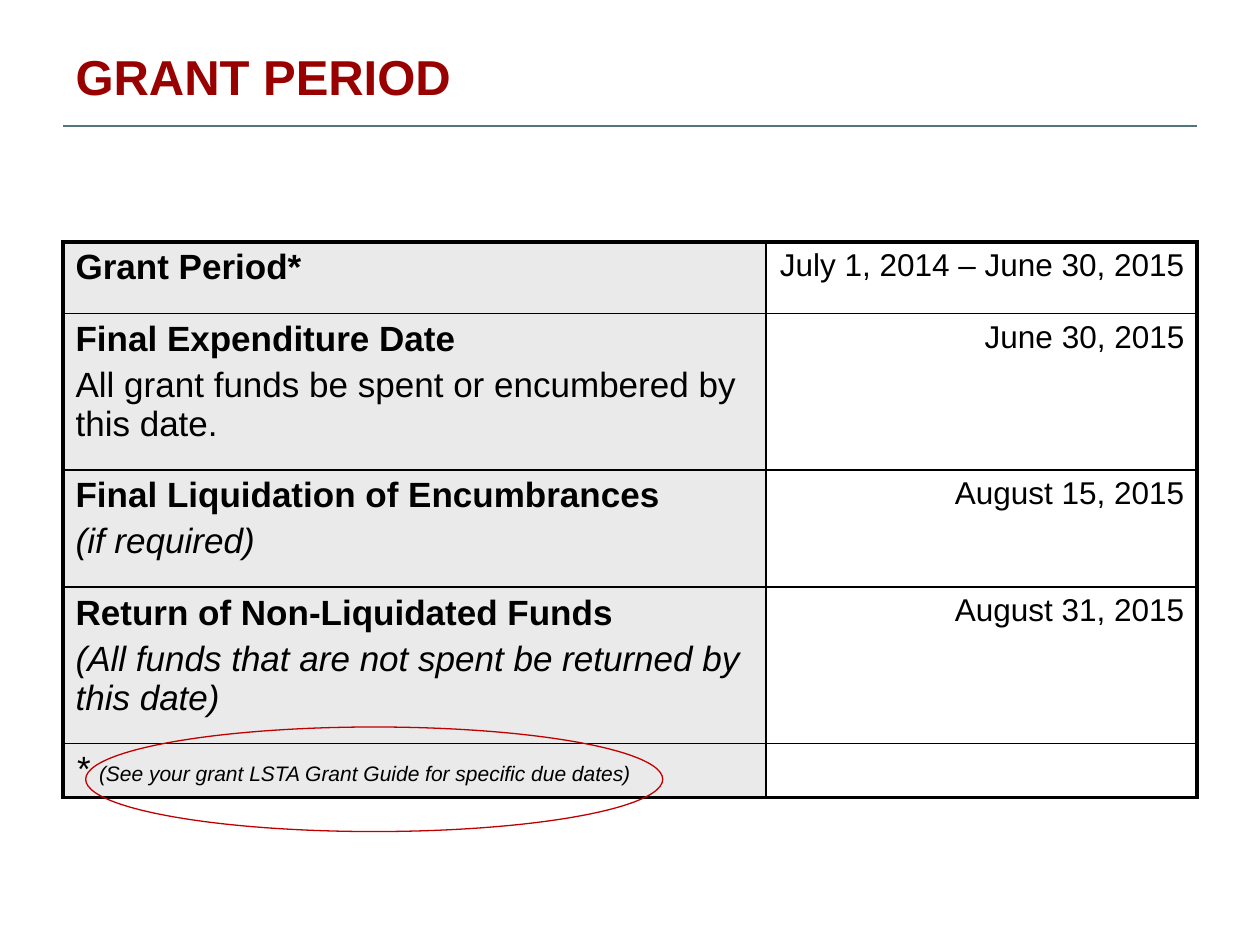
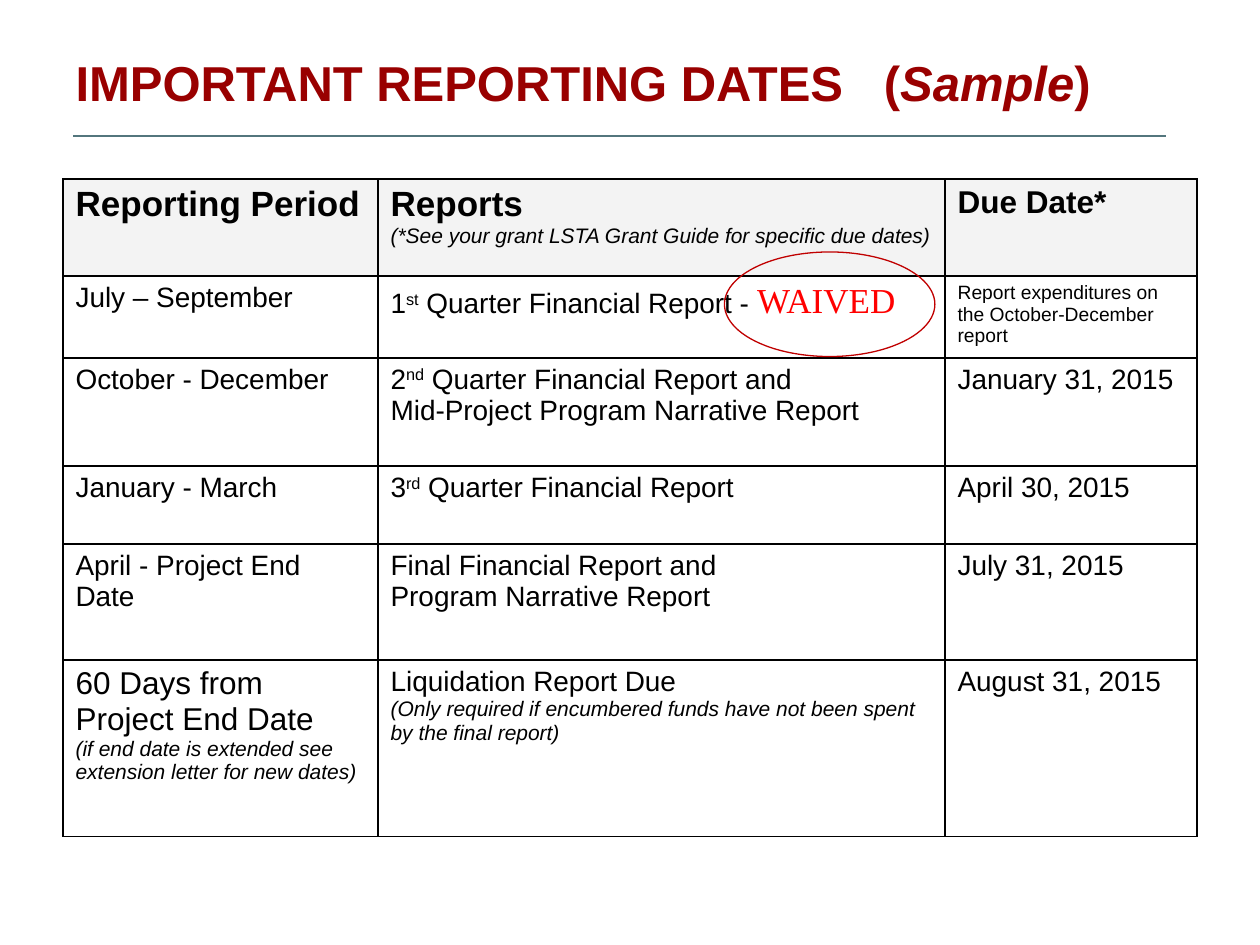
from lxml.etree import SubElement
from pptx import Presentation
from pptx.dml.color import RGBColor
from pptx.enum.shapes import MSO_CONNECTOR as CONNECTOR, MSO_SHAPE as SHAPE
from pptx.enum.text import MSO_ANCHOR as ANCHOR, MSO_AUTO_SIZE as AUTO_SIZE, PP_ALIGN as ALIGN
from pptx.oxml.ns import qn
from pptx.util import Inches, Pt

COLORS = {
    "title": "990000",
    "rule": "53767D",
    "text": "000000",
    "grid": "000000",
    "label": "EAEAEA",
    "header": "F3F3F3",
    "ring": "C00000",
    "waived": "FF0000",
}
FONT = "Arial"
TITLE_SIZE = 28
THIN, THICK = 1, 2.25
TITLE_ONLY = 5

# A run is (text, size, marks); marks: b bold, i italic, ^ superscript, w waived
# A cell is a list of paragraphs, and a paragraph is a list of runs
GRANT_ROWS = [
    ([[("Grant Period*", 20, "b")]],
     [[("July 1, 2014 – June 30, 2015", 18, "")]]),
    ([[("Final Expenditure Date", 20, "b")],
      [("All grant funds be spent or encumbered by this date.", 20, "")]],
     [[("June 30, 2015", 18, "")]]),
    ([[("Final Liquidation of Encumbrances", 20, "b")],
      [("(if required)", 20, "i")]],
     [[("August 15, 2015", 18, "")]]),
    ([[("Return of Non-Liquidated Funds", 20, "b")],
      [("(All funds that are not spent be returned by this date)", 20, "i")]],
     [[("August 31, 2015", 18, "")]]),
    ([[("* ", 20, "i"),
       ("(See your grant LSTA Grant Guide for specific due dates)", 12, "i")]],
     []),
]


def line(text, size=16, marks=""):
    """One paragraph holding a single run."""
    return [(text, size, marks)]


def quarter(number, ordinal, rest):
    """One paragraph that opens with an ordinal number."""
    return [(number, 16, ""), (ordinal, 16, "^"),
            (f" Quarter Financial Report{rest}", 16, "")]


REPORT_ROWS = [
    ([line("Reporting Period", 20, "b")],
     [line("Reports", 20, "b"),
      line("(*See your grant LSTA Grant Guide for specific due dates)", 12, "i")],
     [line("Due Date*", 18, "b")]),
    ([line("July – September")],
     [quarter("1", "st", " - ") + line("WAIVED", 20, "w")],
     [line("Report expenditures on the October-December report", 11)]),
    ([line("October - December")],
     [quarter("2", "nd", " and"), line("Mid-Project Program Narrative Report")],
     [line("January 31, 2015")]),
    ([line("January - March")],
     [quarter("3", "rd", "")],
     [line("April 30, 2015")]),
    ([line("April - Project End Date")],
     [line("Final Financial Report and"), line("Program Narrative Report")],
     [line("July 31, 2015")]),
    ([line("60 Days from Project End Date", 18),
      line("(if end date is extended see extension letter for new dates)", 12, "i")],
     [line("Liquidation Report Due"),
      line("(Only required if encumbered funds have not been spent by the final report)",
           12, "i")],
     [line("August 31, 2015")]),
]


def rgb(name):
    return RGBColor.from_string(COLORS[name])


def add_run(paragraph, text, size, marks="", color="text"):
    run = paragraph.add_run()
    run.text = text
    font = run.font
    font.size = Pt(size)
    font.bold = "b" in marks
    font.italic = "i" in marks
    font.name = "Times New Roman" if "w" in marks else FONT
    font.color.rgb = rgb("waived" if "w" in marks else color)
    if "^" in marks:
        run._r.get_or_add_rPr().set("baseline", "30000")
    return run


def add_title(slide, height, parts):
    title = slide.shapes.title
    title.left, title.top = Inches(0.5), Inches(0.3)
    title.width, title.height = Inches(9), Inches(height)
    frame = title.text_frame
    frame.auto_size = AUTO_SIZE.NONE
    frame.vertical_anchor = ANCHOR.MIDDLE
    paragraph = frame.paragraphs[0]
    paragraph.alignment = ALIGN.LEFT
    return [add_run(paragraph, text, TITLE_SIZE, marks, "title")
            for text, marks in parts]


def add_rule(slide, left, right, y):
    rule = slide.shapes.add_connector(
        CONNECTOR.STRAIGHT, Inches(left), Inches(y), Inches(right), Inches(y))
    rule.line.color.rgb = rgb("rule")
    rule.line.width = Pt(1.5)
    SubElement(rule._element.spPr, qn("a:effectLst"))


def add_ring(slide, left, top, width, height):
    ring = slide.shapes.add_shape(
        SHAPE.OVAL, Inches(left), Inches(top), Inches(width), Inches(height))
    ring.shadow.inherit = False
    ring.fill.background()
    ring.line.color.rgb = rgb("ring")
    ring.line.width = Pt(0.75)


def set_borders(cell, widths):
    """Draw the left, right, top and bottom borders, in that order."""
    properties = cell._tc.get_or_add_tcPr()
    for side, width in zip("LRTB", widths):
        border = SubElement(properties, qn(f"a:ln{side}"), w=str(Pt(width)))
        fill = SubElement(border, qn("a:solidFill"))
        SubElement(fill, qn("a:srgbClr"), val=COLORS["grid"])


def fill_cell(cell, paragraphs, alignment, gap):
    frame = cell.text_frame
    for index, runs in enumerate(paragraphs):
        paragraph = frame.add_paragraph() if index else frame.paragraphs[0]
        paragraph.alignment = alignment
        if index:
            paragraph.space_before = Pt(gap)
        for run in runs:
            add_run(paragraph, *run)


def add_grid(slide, top, widths, heights, rows, shade, outline=THIN,
             alignments=None, gap=0):
    """Add a table; shade(row, column) gives a colour name or None."""
    table = slide.shapes.add_table(
        len(heights), len(widths), Inches(0.5), Inches(top),
        Inches(sum(widths)), Inches(sum(heights))).table
    table.first_row = table.horz_banding = False
    for column, width in zip(table.columns, widths):
        column.width = Inches(width)
    for row, height in zip(table.rows, heights):
        row.height = Inches(height)

    last_row, last_column = len(heights) - 1, len(widths) - 1
    for r, contents in enumerate(rows):
        for c, paragraphs in enumerate(contents):
            cell = table.cell(r, c)
            edges = (c == 0, c == last_column, r == 0, r == last_row)
            set_borders(cell, [outline if edge else THIN for edge in edges])
            color = shade(r, c)
            if color:
                cell.fill.solid()
                cell.fill.fore_color.rgb = rgb(color)
            else:
                cell.fill.background()
            fill_cell(cell, paragraphs,
                      alignments[c] if alignments else ALIGN.LEFT, gap)


def add_grant_period(deck):
    slide = deck.slides.add_slide(deck.slide_layouts[TITLE_ONLY])
    add_title(slide, 0.6, [("GRANT PERIOD", "b")])
    add_rule(slide, 0.5, 9.5, 1)
    add_grid(slide, 1.92, [5.58, 3.42], [0.57, 1.24, 0.93, 1.24, 0.43], GRANT_ROWS,
             shade=lambda r, c: "label" if c == 0 else None,
             outline=THICK, alignments=[ALIGN.LEFT, ALIGN.RIGHT], gap=4)
    add_ring(slide, 0.68, 5.77, 4.58, 0.83)


def add_reporting_dates(deck):
    slide = deck.slides.add_slide(deck.slide_layouts[TITLE_ONLY])
    runs = add_title(slide, 0.7, [("IMPORTANT REPORTING DATES", "b"), (" ", "b"),
                                  ("(", "b"), ("Sample", "bi"), (")", "b")])
    # Widen the space before the bracket
    runs[1]._r.get_or_add_rPr().set("spc", "1560")
    add_rule(slide, 0.58, 9.25, 1.08)
    add_grid(slide, 1.42, [2.5, 4.5, 2], [0.77, 0.65, 0.86, 0.62, 0.92, 1.4],
             REPORT_ROWS, shade=lambda r, c: "header" if r == 0 else None)
    add_ring(slide, 5.75, 2, 1.67, 0.83)


def main():
    deck = Presentation()
    deck.slide_width, deck.slide_height = Inches(10), Inches(7.5)
    add_grant_period(deck)
    add_reporting_dates(deck)
    deck.save("out.pptx")


if __name__ == "__main__":
    main()
